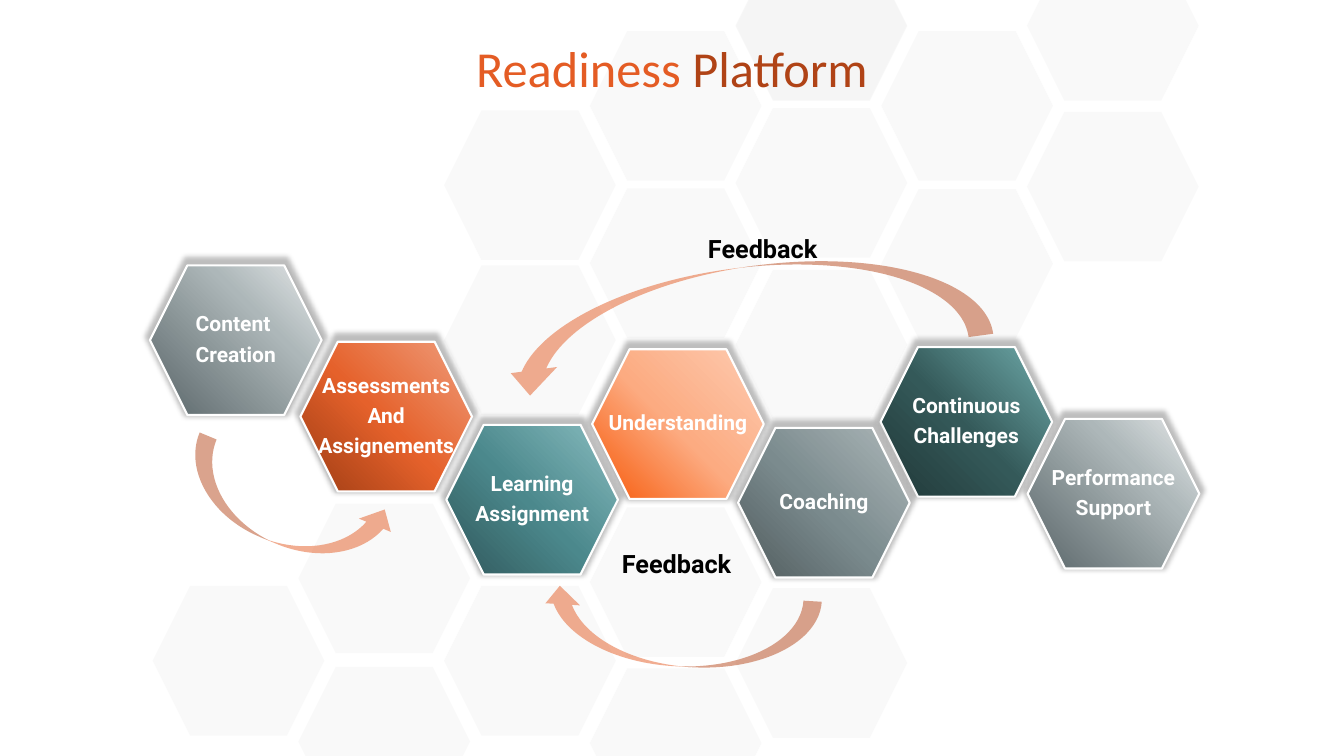
from copy import deepcopy
from dataclasses import dataclass

from lxml import etree
from pptx import Presentation
from pptx.dml.color import RGBColor
from pptx.enum.shapes import MSO_SHAPE
from pptx.enum.text import MSO_ANCHOR, MSO_AUTO_SIZE, PP_ALIGN
from pptx.oxml.ns import qn
from pptx.util import Pt

HEXAGON = MSO_SHAPE.HEXAGON
CURVED_ARROW = MSO_SHAPE.CURVED_RIGHT_ARROW
CENTER = PP_ALIGN.CENTER
TOP, MIDDLE = MSO_ANCHOR.TOP, MSO_ANCHOR.MIDDLE
FIT_TEXT = MSO_AUTO_SIZE.SHAPE_TO_FIT_TEXT


@dataclass(frozen=True)
class Theme:
    white: str = "FFFFFF"
    black: str = "000000"
    orange: str = "E45C24"
    rust: str = "B04316"
    pale: str = "D9D9D9"
    pale_dark: str = "BFBFBF"
    silver_gradient: tuple = ((0, "596568"), (65, "ADB7B9"), (100, "E4E7E8"))
    orange_gradient: tuple = ((0, "9D3C13"), (48, "E5612B"), (100, "EF9D7C"))
    teal_gradient: tuple = ((0, "30575A"), (48, "4B888C"), (100, "88BCBF"))
    peach_gradient: tuple = ((0, "F75706"), (48, "FCAB81"), (100, "FDCBB1"))
    grey_gradient: tuple = ((0, "505B5D"), (48, "7B8B8E"), (100, "ADB7B9"))
    dark_gradient: tuple = ((0, "203737"), (48, "345959"), (100, "6FABAB"))
    title_font: str = "Calibri"
    label_font: str = "Roboto"
    title_size: int = 48
    feedback_size: int = 24
    label_size: int = 20


THEME = Theme()
SLIDE_WIDTH, SLIDE_HEIGHT = 1280.16, 720
HEX_WIDTH, HEX_HEIGHT = 163.5, 142.5
FIRST_COLUMN, COLUMN_PITCH = 227.2, 138.8

COLUMN_CENTERS = (
    (323.3, 629.3),
    (398.9, 550.8, 706.3),
    (176.4, 324, 475.9, 629.3),
    (100.8, 250.6, 403.9, 554.4, 707.8),
    (24.5, 174.2, 328.3, 479.5, 631.4),
    (100.8, 251.3, 403.9),
    (24.5, 177.8, 470.9),
)
DARKER_CELL = (4, 24.5)

STAGES = (
    (("Learning", "Assignment"), 506.9, 475.9, THEME.teal_gradient),
    (("Understanding",), 645.8, 403.9, THEME.peach_gradient),
    (("Continuous", "Challenges"), 920.5, 401.8, THEME.dark_gradient),
    (("Assessments", "And", "Assignements"), 367.9, 396.7, THEME.orange_gradient),
    (("Performance", "Support"), 1060.6, 470.2, THEME.silver_gradient),
    (("Coaching",), 784.8, 478.8, THEME.grey_gradient),
    (("Content ", "Creation"), 224.6, 324, THEME.silver_gradient),
)

ARROWS = (
    ((661, 68.4, 94.3, 467.3), 82.4, False),
    ((237.6, 380.2, 69.8, 207.4), 292.6, False),
    ((612.7, 466.6, 69.8, 266.4), 273.5, True),
)
FEEDBACK_BOXES = ((642.2, 218.2, 168.5, 36), (544.3, 519.1, 200.2, 36))


def rgb(value):
    return RGBColor.from_string(value)


def set_opacity(properties, percent):
    for color in properties.iter(qn("a:srgbClr")):
        etree.SubElement(color, qn("a:alpha"), val=str(percent * 1000))


def write_text(shape, lines, *, font, size, bold=False, anchor=TOP, wrap=True,
               line_spacing=None, space_after=None, margins=None):
    frame = shape.text_frame
    frame.word_wrap = wrap
    frame.vertical_anchor = anchor
    if margins is not None:
        frame.margin_left = frame.margin_right = Pt(margins)
        frame.margin_top = frame.margin_bottom = Pt(margins)
    for index, runs in enumerate(lines):
        paragraph = frame.add_paragraph() if index else frame.paragraphs[0]
        paragraph.alignment = CENTER
        paragraph.line_spacing = line_spacing
        if space_after is not None:
            paragraph.space_after = Pt(space_after)
        for text, color in runs:
            run = paragraph.add_run()
            run.text = text
            run.font.name = font
            run.font.size = Pt(size)
            run.font.bold = bold
            run.font.color.rgb = rgb(color)


def add_text_box(slide, box, lines, **text_format):
    shape = slide.shapes.add_textbox(*map(Pt, box))
    write_text(shape, lines, **text_format)
    return shape


def add_hexagon(slide, center_x, center_y):
    shape = slide.shapes.add_shape(
        HEXAGON, Pt(center_x - HEX_WIDTH / 2), Pt(center_y - HEX_HEIGHT / 2),
        Pt(HEX_WIDTH), Pt(HEX_HEIGHT))
    shape.adjustments[0] = 0.25
    shape.shadow.inherit = False
    shape.line.color.rgb = rgb(THEME.white)
    shape.line.width = Pt(2)
    return shape


def add_background_cell(slide, center_x, center_y, color):
    shape = add_hexagon(slide, center_x, center_y)
    shape.fill.solid()
    shape.fill.fore_color.rgb = rgb(color)
    set_opacity(shape.element.spPr, 15)


def fill_gradient(shape, stops):
    shape.fill.gradient()
    shape.fill.gradient_angle = 45
    stop_list = shape.element.spPr.find(".//" + qn("a:gsLst"))
    stop_list.append(deepcopy(stop_list[-1]))
    for stop, (position, color) in zip(shape.fill.gradient_stops, stops):
        stop.position = position / 100
        stop.color.rgb = rgb(color)


def add_glow_shadow(shape):
    effects = shape.element.spPr.find(qn("a:effectLst"))
    shadow = etree.SubElement(
        effects, qn("a:outerShdw"), blurRad=str(Pt(5)), dist="0", dir="0",
        sx="105000", sy="105000", algn="b", rotWithShape="0")
    etree.SubElement(shadow, qn("a:srgbClr"), val=THEME.black)
    set_opacity(shadow, 25)


def add_stage(slide, label, center_x, center_y, gradient):
    shape = add_hexagon(slide, center_x, center_y)
    fill_gradient(shape, gradient)
    add_glow_shadow(shape)
    write_text(shape, [[(line, THEME.white)] for line in label],
               font=THEME.label_font, size=THEME.label_size, bold=True,
               anchor=MIDDLE, wrap=False, line_spacing=0.9, space_after=7, margins=0)


def add_curved_arrow(slide, box, rotation, flipped):
    shape = slide.shapes.add_shape(CURVED_ARROW, *map(Pt, box))
    shape.adjustments[1] = 0.472
    shape.rotation = rotation
    if flipped:
        shape.element.spPr.find(qn("a:xfrm")).set("flipV", "1")
    shape.shadow.inherit = False
    shape.line.fill.background()
    shape.fill.solid()
    shape.fill.fore_color.rgb = rgb(THEME.orange)
    set_opacity(shape.element.spPr, 50)


def main():
    presentation = Presentation()
    presentation.slide_width = Pt(SLIDE_WIDTH)
    presentation.slide_height = Pt(SLIDE_HEIGHT)
    slide = presentation.slides.add_slide(presentation.slide_layouts[6])

    for column, centers in enumerate(COLUMN_CENTERS):
        for center_y in centers:
            color = THEME.pale_dark if (column, center_y) == DARKER_CELL else THEME.pale
            add_background_cell(slide, FIRST_COLUMN + column * COLUMN_PITCH, center_y, color)

    add_text_box(slide, (0, 23.8, SLIDE_WIDTH, 87.1),
                 [[("Readiness ", THEME.orange), ("Platform", THEME.rust)]],
                 font=THEME.title_font, size=THEME.title_size,
                 anchor=MIDDLE, line_spacing=0.9)
    for stage in STAGES:
        add_stage(slide, *stage)
    for arrow in ARROWS:
        add_curved_arrow(slide, *arrow)
    for box in FEEDBACK_BOXES:
        shape = add_text_box(slide, box, [[("Feedback", THEME.black)]],
                             font=THEME.label_font, size=THEME.feedback_size, bold=True)
        shape.text_frame.auto_size = FIT_TEXT

    presentation.save("out.pptx")


if __name__ == "__main__":
    main()
